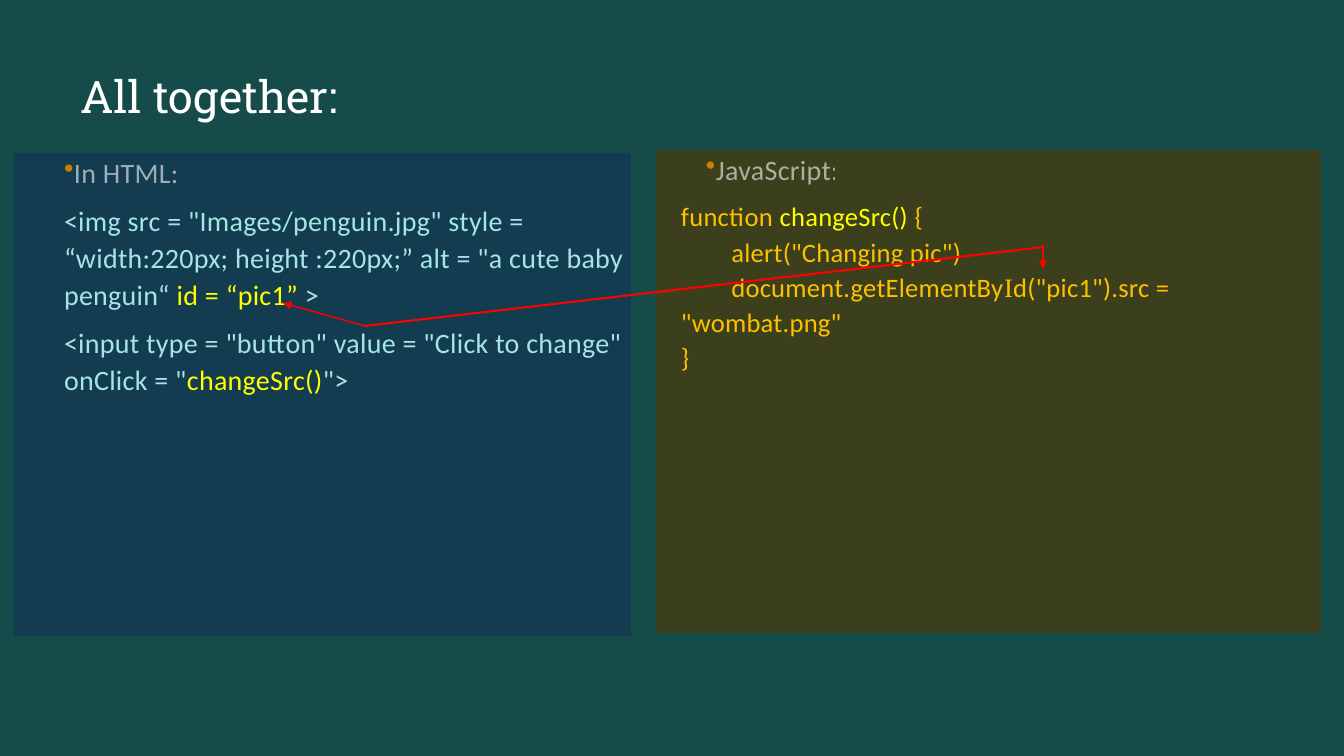
import pptx
import pptx.dml.color
import pptx.enum.shapes
import pptx.enum.text
import pptx.oxml
import pptx.oxml.ns
import pptx.util

COLORS = {
    "background": "154C4A",
    "html_panel": "143C50",
    "script_panel": "3B3F1C",
    "white": "FFFFFF",
    "bullet": "CE7F01",
    "markup": "A5E6E4",
    "highlight": "FFFF00",
    "code": "FFC000",
    "arrow": "FF0000",
}
EMU_PER_PX = 914400 / 100.8
TAB_STOP = 56


def px(length):
    return round(length * EMU_PER_PX)


def rgb(name):
    return pptx.dml.color.RGBColor.from_string(COLORS[name])


def element(tag, **attributes):
    node = pptx.oxml.parse_xml(f"<a:{tag} {pptx.oxml.ns.nsdecls('a')}/>")
    for key, value in attributes.items():
        node.set(key, str(value))
    return node


class SlideBuilder:
    font = "Calibri"

    def __init__(self, deck):
        self.page = deck.slides.add_slide(deck.slide_layouts[6])
        fill = self.page.background.fill
        fill.solid()
        fill.fore_color.rgb = rgb("background")

    def frame(self, box):
        frame = box.text_frame
        frame.word_wrap = True
        frame.vertical_anchor = pptx.enum.text.MSO_ANCHOR.TOP
        frame.margin_left = frame.margin_right = 0
        frame.margin_top = frame.margin_bottom = 0
        return frame

    def span(self, para, text, color, size, font=None, spacing=20, alpha=None):
        span = para.add_run()
        span.text = text
        span.font.name = font or self.font
        span.font.size = pptx.util.Pt(size)
        span.font.color.rgb = rgb(color)
        properties = span.font._element
        properties.set("spc", str(spacing))
        if alpha:
            tint = properties.find(".//" + pptx.oxml.ns.qn("a:srgbClr"))
            tint.append(element("alpha", val=alpha * 1000))

    def title(self, text, left, top, width, height):
        box = self.page.shapes.add_textbox(px(left), px(top), px(width), px(height))
        para = self.frame(box).paragraphs[0]
        self.span(para, text, "white", 32, "Roboto Slab", spacing=0)

    def panel(self, heading, color, left, top, width, height):
        box = self.page.shapes.add_shape(
            pptx.enum.shapes.MSO_SHAPE.RECTANGLE, px(left), px(top), px(width), px(height))
        box.shadow.inherit = False
        box.fill.solid()
        box.fill.fore_color.rgb = rgb(color)
        box.line.fill.background()
        frame = self.frame(box)
        para = frame.paragraphs[0]
        properties = self.layout(para, 0, 50, 1.07, 8)
        bullet_color = element("buClr")
        bullet_color.append(element("srgbClr", val=COLORS["bullet"]))
        properties.append(bullet_color)
        properties.append(element("buChar", char="•"))
        self.span(para, heading, "white", 20, alpha=58)
        return frame

    def layout(self, para, margin, indent, line_spacing, after):
        para.alignment = pptx.enum.text.PP_ALIGN.LEFT
        para.line_spacing = line_spacing
        para.space_after = pptx.util.Pt(after)
        properties = para._p.get_or_add_pPr()
        properties.set("marL", str(px(margin)))
        properties.set("indent", str(px(indent)))
        return properties

    def code(self, frame, runs, size, margin, after):
        para = frame.add_paragraph()
        properties = self.layout(para, margin, 0, 1.1, after)
        properties.append(element("buNone"))
        tabs = element("tabLst")
        tabs.append(element("tab", pos=px(TAB_STOP), algn="l"))
        properties.append(tabs)
        for text, color, *font in runs:
            if text == "\n":
                para.add_line_break()
            else:
                self.span(para, text, color, size, *font)

    def line(self, start, end, width, arrow):
        line = self.page.shapes.add_connector(
            pptx.enum.shapes.MSO_CONNECTOR.STRAIGHT, *map(px, start + end))
        line.line.color.rgb = rgb("arrow")
        line.line.width = pptx.util.Pt(width)
        if arrow:
            line.line._get_or_add_ln().append(element("tailEnd", type="triangle"))
        line._element.spPr.append(element("effectLst"))


HTML_CODE = [
    [('<img src = "Images/penguin.jpg" style = “width:220px; height :220px;” '
      'alt = "a cute baby penguin“ ', "markup"),
     ("id = “pic1” ", "highlight"), (">", "markup")],
    [('<input type = "button" value = "Click to change" ', "markup"),
     ("\n", "markup"), ('onClick = "', "markup"),
     ("changeSrc()", "highlight"), ('">', "markup")],
]
SCRIPT_CODE = [
    [("function ", "code"), ("changeSrc() ", "highlight"), ("{", "code")],
    [('\talert("Changing pic")', "code")],
    [("\tdocument.getElementBy", "code"), ("I", "code", "Times New Roman"),
     ('d("pic1").src = "wombat.png"', "code")],
    [("}", "code")],
]
ARROWS = [
    ((365, 326), (283, 303), 1, True),
    ((365, 326), (1044, 247), 1.5, False),
    ((1043, 245), (1043, 269), 1, True),
]


def main():
    deck = pptx.Presentation()
    deck.slide_width, deck.slide_height = px(1344), px(756)
    slide = SlideBuilder(deck)
    slide.title("All together:", 80, 69, 1182, 163)
    html = slide.panel("In HTML:", "html_panel", 14, 153, 617, 483)
    for runs in HTML_CODE:
        slide.code(html, runs, 20, 50, 8)
    script = slide.panel("JavaScript:", "script_panel", 656, 150, 665, 483)
    for runs in SCRIPT_CODE:
        slide.code(script, runs, 19, 25, 0)
    for arrow in ARROWS:
        slide.line(*arrow)
    deck.save("out.pptx")


if __name__ == "__main__":
    main()
